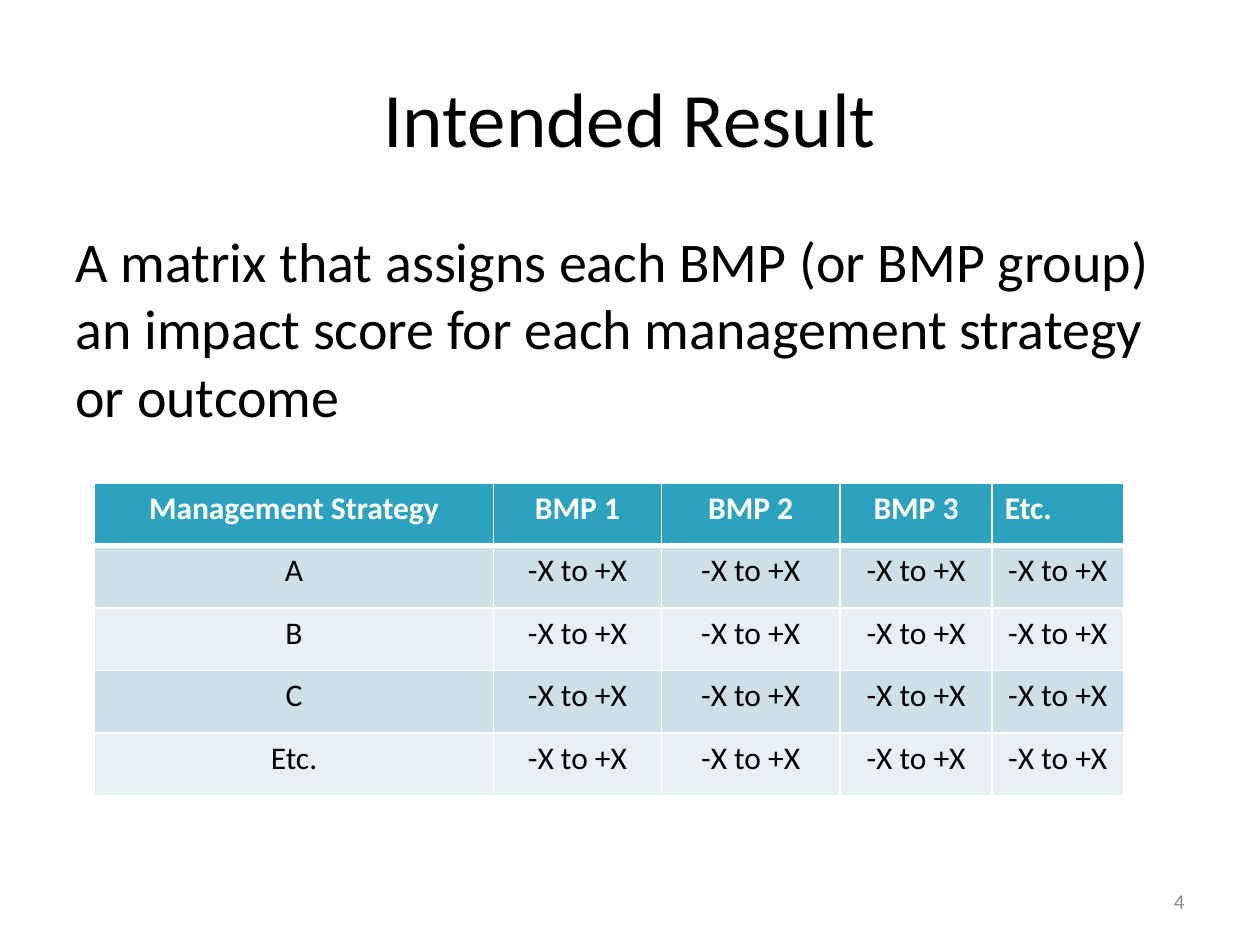
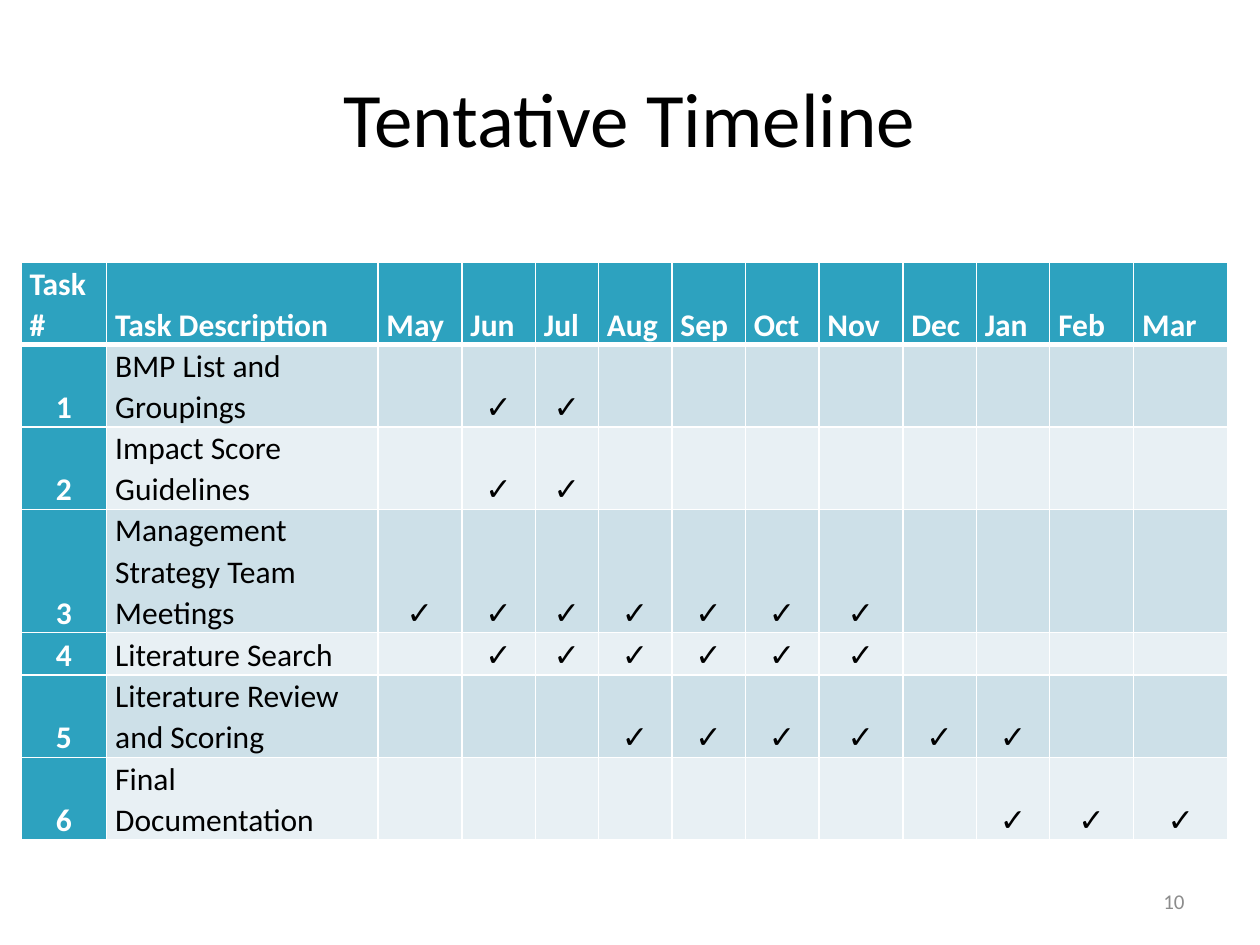
from lxml.etree import SubElement
from pptx import Presentation
from pptx.dml.color import RGBColor
from pptx.enum.text import MSO_ANCHOR, PP_ALIGN
from pptx.oxml.ns import qn
from pptx.util import Pt

COLORS = {
    "text": "000000",
    "white": "FFFFFF",
    "header": "2DA2BF",
    "band_dark": "CDE0E8",
    "band_light": "E8F0F4",
    "page_number": "8C8C8C",
}
FONT = "Calibri"
MONTHS = ["May", "Jun", "Jul", "Aug", "Sep", "Oct", "Nov", "Dec", "Jan", "Feb", "Mar"]
# description, first month, last month, row height
TASKS = [
    ("BMP List and Groupings", "Jun", "Jul", 47),
    ("Impact Score Guidelines", "Jun", "Jul", 47),
    ("Management Strategy Team Meetings", "May", "Nov", 70.5),
    ("Literature Search", "Jun", "Nov", 24.3),
    ("Literature Review and Scoring", "Aug", "Jan", 47),
    ("Final Documentation", "Jan", "Mar", 47),
]


def write(frame, text, size=18, color="text", bold=False, align=PP_ALIGN.LEFT, spacing=None):
    paragraph = frame.paragraphs[0]
    paragraph.alignment = align
    paragraph.line_spacing = spacing
    if not text:
        return
    run = paragraph.add_run()
    run.text = text
    run.font.name = FONT
    run.font.size = Pt(size)
    run.font.bold = bold
    run.font.color.rgb = RGBColor.from_string(COLORS[color])


def set_borders(cell, **widths):
    """Draw white borders; widths are points by side: L, R, T, B."""
    properties = cell._tc.get_or_add_tcPr()
    for side in "LRTB":
        line = SubElement(properties, qn(f"a:ln{side}"), w=str(Pt(widths.get(side, 1))))
        fill = SubElement(line, qn("a:solidFill"))
        SubElement(fill, qn("a:srgbClr"), val=COLORS["white"])


class Deck:
    def __init__(self):
        self.presentation = Presentation()
        self.presentation.slide_width = Pt(720)
        self.presentation.slide_height = Pt(540)
        self.slide = None

    def add_slide(self, title, number):
        self.slide = self.presentation.slides.add_slide(self.presentation.slide_layouts[6])
        self.add_text(title, 36, 21.6, 648, 90, anchor=MSO_ANCHOR.MIDDLE,
                      size=44, align=PP_ALIGN.CENTER)
        self.add_text(str(number), 516, 500.5, 168, 28.75, anchor=MSO_ANCHOR.MIDDLE,
                      size=12, color="page_number", align=PP_ALIGN.RIGHT)

    def add_text(self, text, left, top, width, height, anchor=MSO_ANCHOR.TOP, **style):
        box = self.slide.shapes.add_textbox(Pt(left), Pt(top), Pt(width), Pt(height))
        box.text_frame.word_wrap = True
        box.text_frame.vertical_anchor = anchor
        write(box.text_frame, text, **style)

    def add_table(self, rows, left, top, widths, heights, align_at,
                  label_column=False, compact=False):
        """align_at(row, column) gives the alignment of a cell."""
        table = self.slide.shapes.add_table(
            len(rows), len(widths), Pt(left), Pt(top), Pt(sum(widths)), Pt(sum(heights))).table
        table.first_row = table.horz_banding = False
        for column, width in zip(table.columns, widths):
            column.width = Pt(width)
        for r, (texts, height) in enumerate(zip(rows, heights)):
            table.rows[r].height = Pt(height)
            for c, text in enumerate(texts):
                cell = table.cell(r, c)
                is_header = r == 0 or (label_column and c == 0)
                band = "band_dark" if r % 2 else "band_light"
                set_borders(cell, T=3 if r == 1 else 1, B=3 if r == 0 else 1)
                cell.fill.solid()
                cell.fill.fore_color.rgb = RGBColor.from_string(
                    COLORS["header" if is_header else band])
                if compact:
                    cell.vertical_anchor = MSO_ANCHOR.BOTTOM
                    cell.margin_left = cell.margin_right = Pt(4.9)
                    cell.margin_top = cell.margin_bottom = 0
                write(cell.text_frame, text, color="white" if is_header else "text",
                      bold=is_header, align=align_at(r, c), spacing=1.07 if compact else None)

    def save(self):
        self.presentation.save("out.pptx")


def build_intended_result(deck):
    deck.add_slide("Intended Result", 4)
    deck.add_text("A matrix that assigns each BMP (or BMP group) an impact score "
                  "for each management strategy or outcome", 36, 126, 648, 126, size=32)
    header = ["Management Strategy", "BMP 1", "BMP 2", "BMP 3", "Etc."]
    scores = [[strategy] + ["-X to +X"] * 4 for strategy in ("A", "B", "C", "Etc.")]
    deck.add_table([header] + scores, 54, 276, [228, 96, 102, 87, 75], [35.7] * 5,
                   lambda r, c: PP_ALIGN.LEFT if (r, c) == (0, 4) else PP_ALIGN.CENTER)


def build_timeline(deck):
    deck.add_slide("Tentative Timeline", 10)
    rows = [["Task #", "Task Description"] + MONTHS]
    for number, (description, first, last, _) in enumerate(TASKS, 1):
        active = range(MONTHS.index(first), MONTHS.index(last) + 1)
        checks = ["✓" if month in active else "" for month in range(len(MONTHS))]
        rows.append([str(number), description] + checks)
    deck.add_table(rows, 12, 150, [49, 155, 48, 42, 36, 42, 42, 42, 48, 42, 42, 48, 54],
                   [47] + [task[-1] for task in TASKS],
                   lambda r, c: PP_ALIGN.LEFT if r == 0 or c == 1 else PP_ALIGN.CENTER,
                   label_column=True, compact=True)


def main():
    deck = Deck()
    build_intended_result(deck)
    build_timeline(deck)
    deck.save()


if __name__ == "__main__":
    main()
